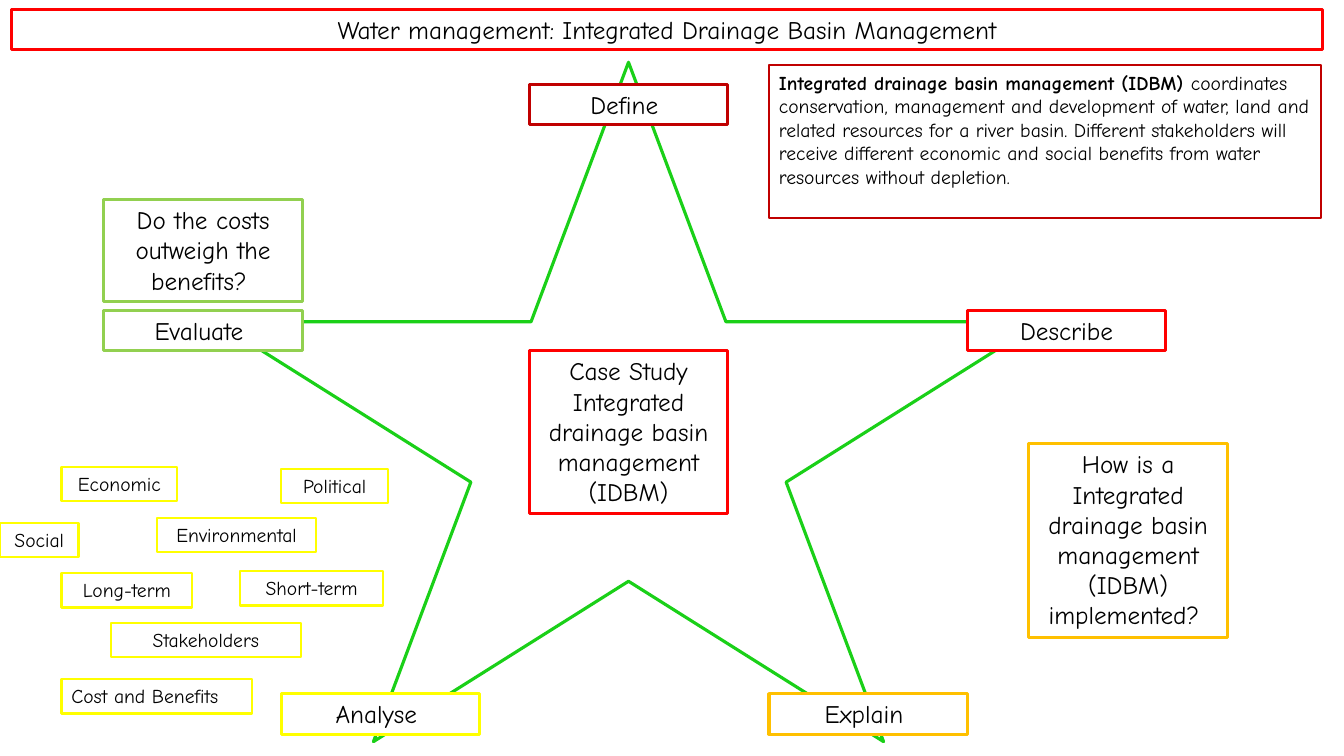
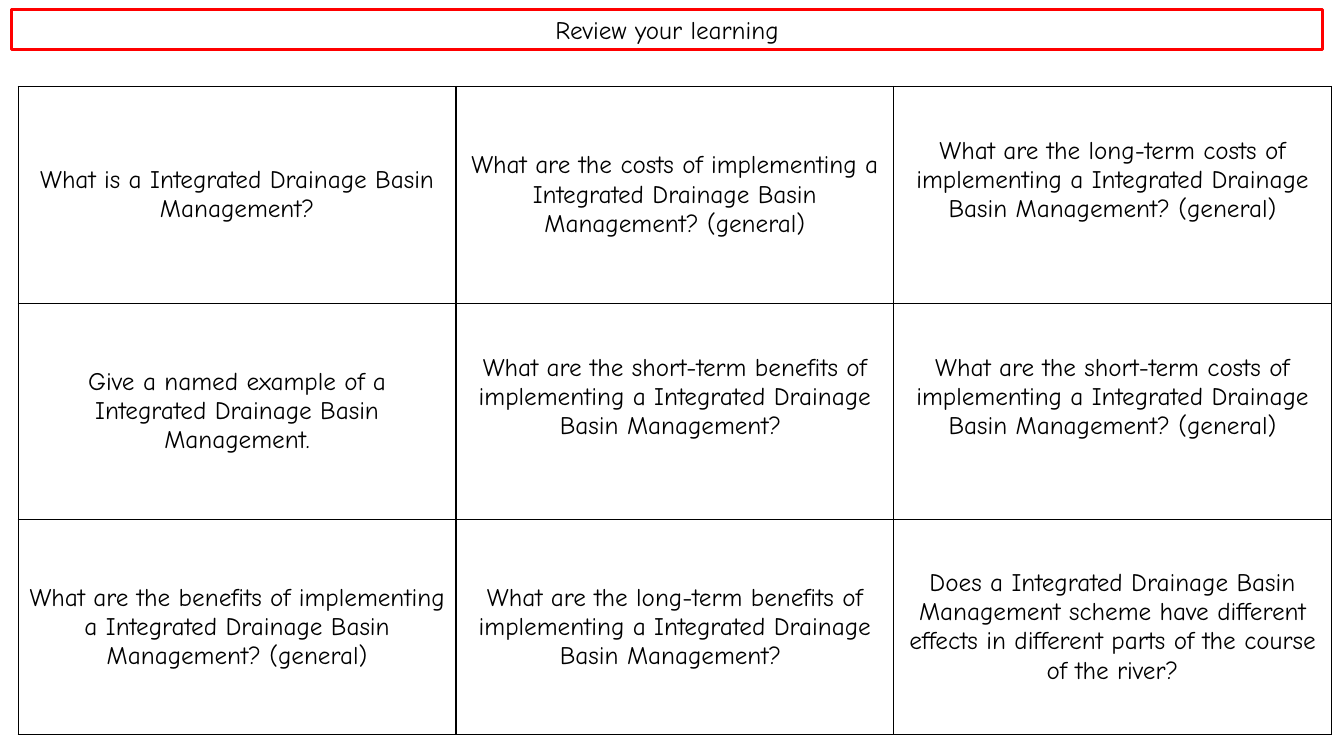
"""Build two revision slides on integrated drainage basin management."""
from lxml import etree
from pptx import Presentation
from pptx.dml.color import RGBColor
from pptx.enum.shapes import MSO_SHAPE
from pptx.enum.text import MSO_ANCHOR, MSO_AUTO_SIZE, PP_ALIGN
from pptx.oxml.ns import qn
from pptx.util import Cm, Pt

STAR = MSO_SHAPE.STAR_5_POINT
MIDDLE = MSO_ANCHOR.MIDDLE
GROW, FIXED = MSO_AUTO_SIZE.SHAPE_TO_FIT_TEXT, MSO_AUTO_SIZE.NONE
LEFT, CENTER = PP_ALIGN.LEFT, PP_ALIGN.CENTER

FONT = "Comic Neue"
BLACK, WHITE, RED, DARK_RED = "000000", "FFFFFF", "FF0000", "C00000"
ORANGE, YELLOW, LIME, GREEN = "FFC000", "FFFF00", "92D050", "1AD018"
BOX_W, BOX_H, TAG_H = 5, 1.02, 0.86
THICK, THIN = 2.25, 1.5

TITLES = ["Water management: Integrated Drainage Basin Management", "Review your learning"]
CASE_STUDY = "Case Study\nIntegrated drainage basin management (IDBM)"
TERM = "Integrated drainage basin management (IDBM) "
DEFINITION = (
    "coordinates conservation, management and development of water, land and related "
    "resources for a river basin. Different stakeholders will receive different economic "
    "and social benefits from water resources without depletion."
)
STAR_BOXES = [
    ("Define ", 13.34, 2.13, BOX_H, DARK_RED),
    ("Describe", 24.38, 7.82, BOX_H, RED),
    ("Explain ", 19.38, 17.48, BOX_H, ORANGE),
    ("Analyse ", 7.09, 17.48, BOX_H, YELLOW),
    ("Evaluate ", 2.62, 7.82, BOX_H, LIME),
    ("Do the costs outweigh the benefits? ", 2.62, 5.03, 2.57, LIME),
    ("How is a Integrated drainage basin management (IDBM) implemented? ",
     25.93, 11.18, 4.88, ORANGE),
]
TAGS = [
    ("Cost and Benefits", 1.55, 17.12, 4.8, LEFT),
    ("Long-term", 1.55, 14.45, 3.3, CENTER),
    ("Short-term", 6.05, 14.4, 3.61, CENTER),
    ("Stakeholders", 2.79, 15.7, 4.8, CENTER),
    ("Social", 0, 13.18, 1.98, CENTER),
    ("Economic", 1.55, 11.76, 2.92, CENTER),
    ("Environmental", 3.96, 13.06, 4.01, CENTER),
    ("Political", 7.09, 11.81, 2.69, CENTER),
]
QUESTIONS = [
    ["What is a Integrated Drainage Basin Management?",
     "What are the costs of implementing a Integrated Drainage Basin Management? (general)",
     "What are the long-term costs of implementing a Integrated Drainage Basin Management? (general)"],
    ["Give a named example of a Integrated Drainage Basin Management.",
     "What are the short-term benefits of implementing a Integrated Drainage Basin Management? ",
     "What are the short-term costs of implementing a Integrated Drainage Basin Management? (general)"],
    ["What are the benefits of implementing a Integrated Drainage Basin Management? (general)",
     "What are the long-term benefits of implementing a Integrated Drainage Basin Management? ",
     "Does a Integrated Drainage Basin Management scheme have different effects in different "
     "parts of the course of the river?"],
]
RAISED = {(0, 2), (1, 1), (1, 2)}
RAISED_MARGIN = 0.86
COL_W, ROW_HEIGHTS = 11.03, [5.46, 5.46, 5.41]


def rgb(color):
    """Turn a hex string into a colour."""
    return RGBColor.from_string(color)


def style_text(tf, size=18, align=CENTER):
    """Format every run of a text frame."""
    for p in tf.paragraphs:
        p.alignment = align
        for r in p.runs:
            r.font.name, r.font.size = FONT, Pt(size)
            r.font.color.rgb = rgb(BLACK)


def outline(sp, color, width):
    """Give a shape its line."""
    sp.line.color.rgb = rgb(color)
    sp.line.width = Pt(width)


def add_box(slide, text, x, y, w, h, color, width=THICK, size=18, align=CENTER, fill=None):
    """Add an outlined text box and return it."""
    sp = slide.shapes.add_textbox(Cm(x), Cm(y), Cm(w), Cm(h))
    outline(sp, color, width)
    if fill:
        sp.fill.solid()
        sp.fill.fore_color.rgb = rgb(fill)
    tf = sp.text_frame
    tf.word_wrap, tf.auto_size = True, GROW
    tf.text = text
    style_text(tf, size, align)
    return sp


def add_slide(prs, title):
    """Add a blank slide with the title band."""
    slide = prs.slides.add_slide(prs.slide_layouts[6])
    add_box(slide, title, 0.3, 0.23, 33.02, BOX_H, RED)
    return slide


def add_definition(slide):
    """Add the definition with its term in bold."""
    sp = add_box(slide, TERM, 19.38, 1.65, 13.92, 3.84, DARK_RED, THIN)
    tf = sp.text_frame
    tf.auto_size = FIXED
    p = tf.paragraphs[0]
    p.runs[0].font.bold = True
    p.add_run().text = DEFINITION
    style_text(tf, 14, LEFT)


def set_borders(cell, color, width):
    """Draw all four sides of a table cell."""
    tc_pr = cell._tc.get_or_add_tcPr()
    for i, side in enumerate(("a:lnL", "a:lnR", "a:lnT", "a:lnB")):
        ln = etree.Element(qn(side), w=str(Pt(width)))
        fill = etree.SubElement(ln, qn("a:solidFill"))
        etree.SubElement(fill, qn("a:srgbClr"), val=color)
        tc_pr.insert(i, ln)


def build_star(prs):
    """Build the star of command words."""
    slide = add_slide(prs, TITLES[0])
    star = slide.shapes.add_shape(STAR, Cm(5.44), Cm(1.57), Cm(20.8), Cm(17.12))
    star.shadow.inherit = False
    star.fill.background()
    outline(star, GREEN, THICK)
    add_box(slide, CASE_STUDY, 13.34, 8.84, BOX_W, 4.11, RED)
    for text, x, y, h, color in STAR_BOXES:
        add_box(slide, text, x, y, BOX_W, h, color, fill=WHITE)
    add_definition(slide)
    for text, x, y, w, align in TAGS:
        add_box(slide, text, x, y, w, TAG_H, YELLOW, THIN, 14, align)


def build_review(prs):
    """Build the grid of review questions."""
    slide = add_slide(prs, TITLES[1])
    rows, cols = len(QUESTIONS), len(QUESTIONS[0])
    table = slide.shapes.add_table(
        rows, cols, Cm(0.46), Cm(2.18), Cm(COL_W * cols), Cm(sum(ROW_HEIGHTS))).table
    table.first_row = table.horz_banding = False
    for col in table.columns:
        col.width = Cm(COL_W)
    for i, (questions, height) in enumerate(zip(QUESTIONS, ROW_HEIGHTS)):
        table.rows[i].height = Cm(height)
        for j, question in enumerate(questions):
            cell = table.cell(i, j)
            cell.fill.background()
            cell.vertical_anchor = MIDDLE
            if (i, j) in RAISED:
                cell.margin_bottom = Cm(RAISED_MARGIN)
            cell.text_frame.text = question
            style_text(cell.text_frame)
            set_borders(cell, BLACK, 1)


def main():
    """Build and save the presentation."""
    prs = Presentation()
    prs.slide_width, prs.slide_height = Cm(33.87), Cm(19.05)
    build_star(prs)
    build_review(prs)
    prs.save("out.pptx")


if __name__ == "__main__":
    main()
